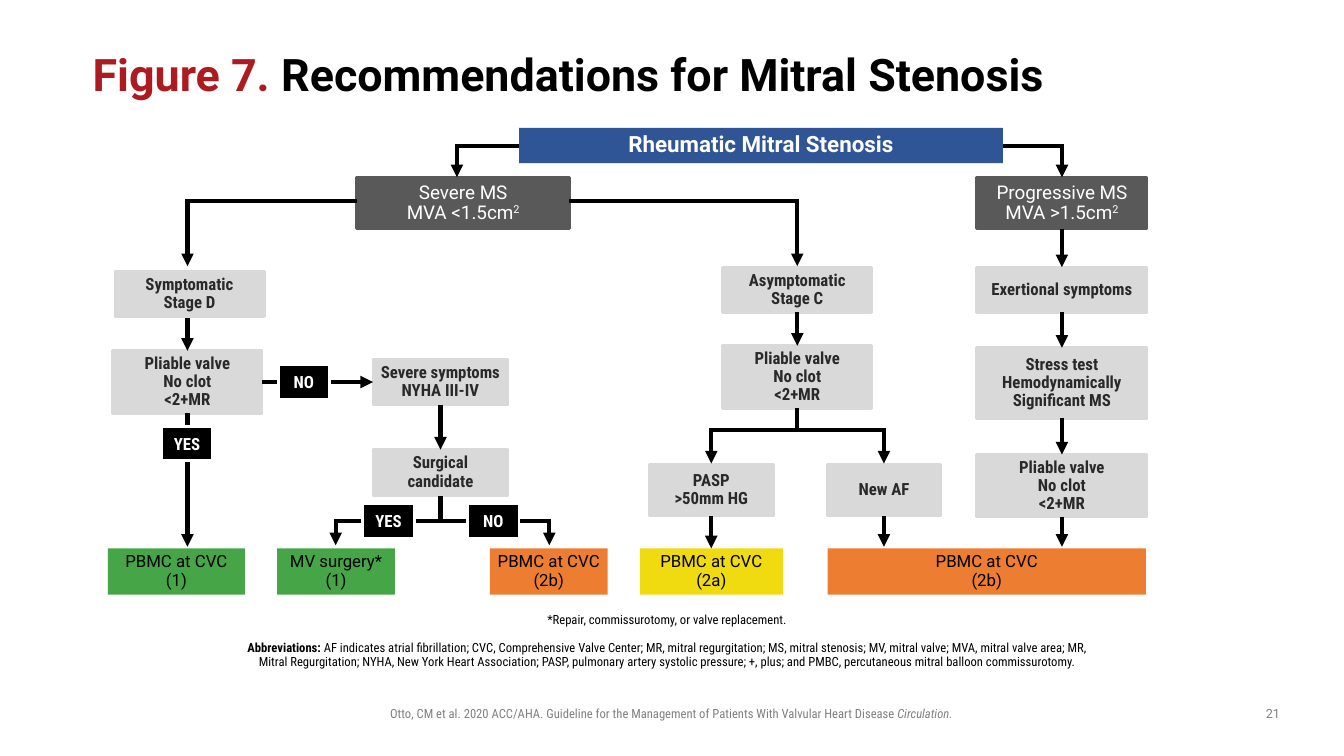
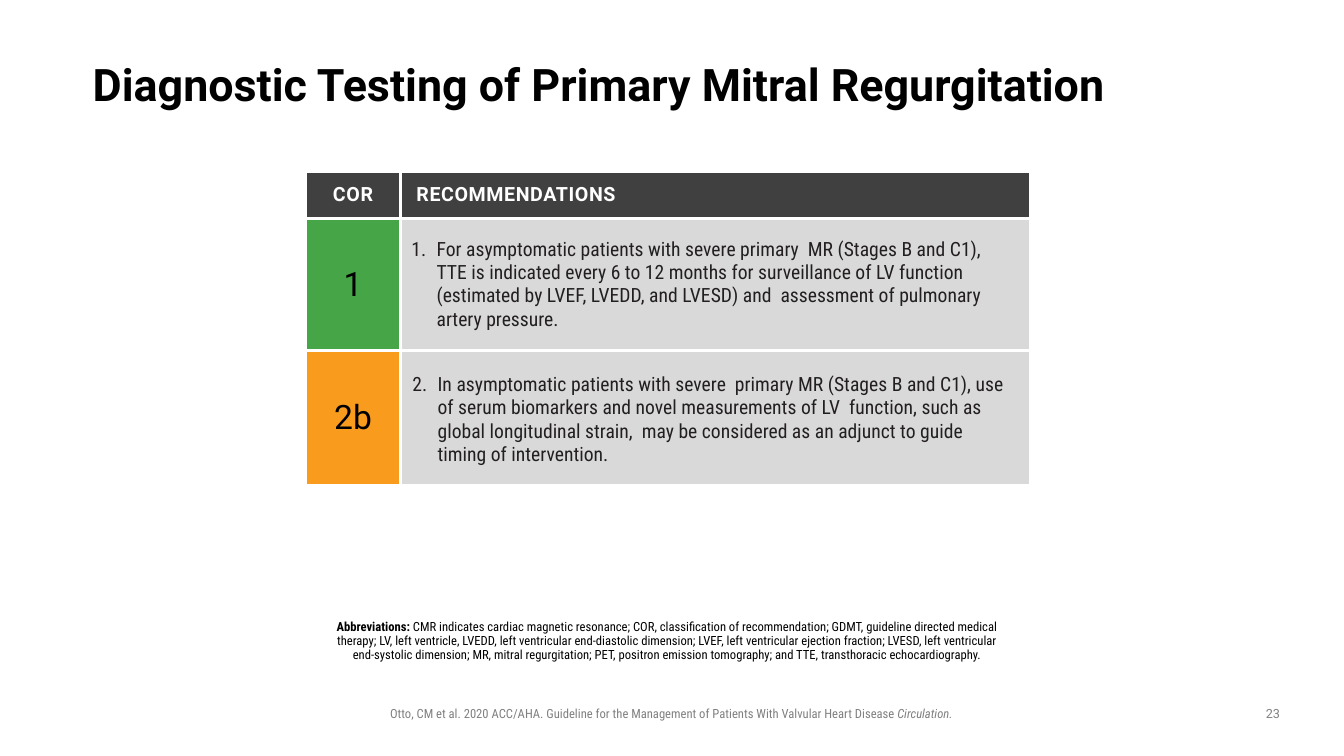
from lxml.etree import SubElement
from pptx import Presentation
from pptx.dml.color import RGBColor
from pptx.enum.shapes import MSO_CONNECTOR, MSO_SHAPE
from pptx.enum.text import MSO_ANCHOR, MSO_AUTO_SIZE, PP_ALIGN
from pptx.oxml import parse_xml
from pptx.oxml.ns import nsdecls, qn
from pptx.util import Pt

WIDE, SLIM = "Roboto", "Roboto Condensed"
BLACK, WHITE, RED, BLUE = "000000", "FFFFFF", "AC1B1F", "2F5597"
GREEN, ORANGE, YELLOW, AMBER = "46A547", "ED7D31", "F0DB10", "F99B1D"
DARK, SLATE, PALE, GREY = "404040", "595959", "D9D9D9", "808080"

HEAD = (WIDE, 32, BLACK, True)
MARK = (WIDE, 32, RED, True)
ROOT = (WIDE, 16, WHITE, True)
GRADE = (WIDE, 13.5, WHITE, False)
STEP = (SLIM, 12, "292929", True)
END = (WIDE, 12, BLACK, False)
TAG = (SLIM, 12, WHITE, True)
NOTE = (SLIM, 9, BLACK, False)
LABEL = (SLIM, 9, BLACK, True)
FOOT = (SLIM, 9, GREY, False)
PAGE = (WIDE, 9, GREY, False)
TOP = (WIDE, 14, WHITE, True)
CLASS = (WIDE, 24, BLACK, False)
ADVICE = (SLIM, 14, "231F20", False)

LEFT, MIDDLE = PP_ALIGN.LEFT, PP_ALIGN.CENTER
BOTTOM_SIDE, LEFT_SIDE, RIGHT_SIDE, TOP_SIDE = 2, 1, 3, 0


def tint(fill, code):
    fill.solid()
    fill.fore_color.rgb = RGBColor.from_string(code)


def say(para, text, style, **extra):
    run = para.add_run()
    run.text = text
    face, size, code, bold = style
    run.font.name, run.font.size, run.font.bold = face, Pt(size), bold
    tint(run.font.fill, code)
    for name, value in extra.items():
        run.font._element.set(name, str(value))


def fit(frame, sides=(0, 0, 0, 0), anchor=MSO_ANCHOR.MIDDLE):
    frame.word_wrap = True
    frame.auto_size = MSO_AUTO_SIZE.NONE
    frame.vertical_anchor = anchor
    left, top, right, bottom = map(Pt, sides)
    frame.margin_left, frame.margin_top = left, top
    frame.margin_right, frame.margin_bottom = right, bottom


def lay(frame, paras, align=MIDDLE, space=0.9, gap=0):
    for index, runs in enumerate(paras):
        para = frame.add_paragraph() if index else frame.paragraphs[0]
        para.alignment, para.line_spacing = align, space
        para.space_before = Pt(gap if index else 0)
        for text, style, *extra in runs:
            say(para, text, style, **(extra[0] if extra else {}))


def move(shape, box):
    shape.left, shape.top, shape.width, shape.height = map(Pt, box)


def head(slide, box, runs):
    title = slide.shapes.title
    move(title, box)
    fit(title.text_frame)
    lay(title.text_frame, [runs], LEFT)


def note(slide, box, paras):
    body = slide.placeholders[1]
    move(body, box)
    frame = body.text_frame
    fit(frame, (0, 3.6, 7.2, 3.6), MSO_ANCHOR.TOP)
    lay(frame, paras, gap=10)
    for para in frame.paragraphs:
        props = para._p.get_or_add_pPr()
        props.set("marL", "0")
        props.set("indent", "0")
        SubElement(props, qn("a:buNone"))


def label(slide, box, runs):
    text = slide.shapes.add_textbox(*map(Pt, box))
    fit(text.text_frame, (7.2, 3.6, 7.2, 3.6), MSO_ANCHOR.TOP)
    lay(text.text_frame, [runs], space=1)
    return text


def footer(slide):
    text = label(slide, (228.2, 500.4, 502.6, 18), [
        ("Otto, CM et al. 2020 ACC/AHA. Guideline for the Management of "
         "Patients With Valvular Heart Disease ", FOOT),
        ("Circulation.", FOOT, {"i": 1})])
    slide.slide_layout.shapes.element.append(text.element)


def page(slide, number):
    label(slide, (894.2, 500.4, 30.2, 18.7), [(number, PAGE)])


def stroke(shape, arrow):
    tint(shape.line.fill, BLACK)
    shape.line.width = Pt(3)
    props = shape.element.spPr
    line = props.find(qn("a:ln"))
    SubElement(line, qn("a:miter"), lim="800000")
    if arrow:
        SubElement(line, qn("a:tailEnd"), type="triangle")
    return props


def flow(slide, left, top):
    shapes = slide.shapes

    def at(x, y):
        return Pt(left + x), Pt(top + y)

    def node(box, lines, style, fill, edge=None, space=0.9):
        x, y, width, height = box
        shape = shapes.add_shape(MSO_SHAPE.RECTANGLE, *at(x, y),
                                 Pt(width), Pt(height))
        shape.shadow.inherit = False
        tint(shape.fill, fill)
        if edge:
            tint(shape.line.fill, edge)
            shape.line.width = Pt(2)
        else:
            shape.line.fill.background()
        fit(shape.text_frame)
        paras = [[(line, style)] if isinstance(line, str) else line
                 for line in lines]
        lay(shape.text_frame, paras, space=space)
        return shape

    def step(box, *lines):
        return node(box, lines, STEP, PALE, PALE)

    def grade(box, name, area):
        small = ("2", GRADE, {"baseline": 30000})
        return node(box, [name, [(area, GRADE), small]], GRADE, SLATE, SLATE)

    def wire(start, stop, arrow=True):
        ends = [at(*end) if isinstance(end[0], (int, float)) else (0, 0)
                for end in (start, stop)]
        line = shapes.add_connector(MSO_CONNECTOR.STRAIGHT, *ends[0], *ends[1])
        if ends[0] == (0, 0):
            line.begin_connect(*start)
        if ends[1] == (0, 0):
            line.end_connect(*stop)
        SubElement(stroke(line, arrow), qn("a:effectLst"))

    def bend(*points):
        first, *rest = [at(*point) for point in points]
        path = shapes.build_freeform(*first)
        path.add_line_segments(rest, close=False)
        shape = path.convert_to_shape()
        shape.shadow.inherit = False
        shape.fill.background()
        stroke(shape, True)

    def fork(box, x, y, tips, low):
        wire((box, BOTTOM_SIDE), (x, y), False)
        for tip in tips:
            bend((x, y), (tip, y), (tip, low))

    pliable = ("Pliable valve", "No clot", "<2+MR")
    node((298.8, 1.4, 345.6, 25.2), ["Rheumatic Mitral Stenosis"], ROOT, BLUE)
    grade((182.9, 36.7, 151.9, 36.7), "Severe MS", "MVA <1.5cm")
    slow = grade((625.7, 36.7, 121.7, 36.7), "Progressive MS", "MVA >1.5cm")
    step((10.1, 103.7, 106.6, 32.4), "Symptomatic", "Stage D")
    quiet = step((444.2, 100.8, 106.6, 32.4), "Asymptomatic", "Stage C")
    effort = step((625.7, 100.8, 121.7, 32.4), "Exertional symptoms")
    stress = step((625.7, 158.4, 121.7, 50.4), "Stress test",
                  "Hemodynamically", "Significant MS")
    valve_d = step((8.6, 160.6, 106.6, 44.6), *pliable)
    valve_c = step((444.2, 157, 106.6, 44.6), *pliable)
    valve_p = step((625.7, 234.7, 121.7, 44.6), *pliable)
    pasp = step((391.8, 241.9, 88.6, 36.7), "PASP", ">50mm HG")
    new_af = step((519.1, 241.9, 80.6, 36.7), "New AF")
    severe = step((194.4, 166.4, 96.5, 33), "Severe symptoms", "NYHA III-IV")
    surgeon = step((194.4, 231.1, 96.5, 33), "Surgical", "candidate")

    ends = [node((x, 301.7, width, 33.1), lines, END, fill)
            for x, width, fill, *lines in (
                (5, 98, GREEN, "PBMC at CVC", "(1)"),
                (126, 84.2, GREEN, "MV surgery*", "(1)"),
                (277.9, 84.2, ORANGE, "PBMC at CVC", "(2b)"),
                (385, 102.2, YELLOW, "PBMC at CVC", "(2a)"),
                (519.1, 227.5, ORANGE, "PBMC at CVC", "(2b)"))]

    bend((298.8, 14), (254.4, 14), (254.4, 36.7))
    bend((644.4, 14), (686.55, 14), (686.55, 36.7))
    bend((182.9, 53.3), (61.9, 53.3), (61.9, 100.1))
    bend((334.8, 53.3), (497.5, 53.3), (497.5, 100.1))
    for upper, lower in ((slow, effort), (effort, stress), (stress, valve_p),
                         (quiet, valve_c), (severe, surgeon), (pasp, ends[3])):
        wire((upper, BOTTOM_SIDE), (lower, TOP_SIDE))
    wire((61.9, 137.5), (valve_d, TOP_SIDE))
    wire((valve_d, RIGHT_SIDE), (severe, LEFT_SIDE))
    for upper, x in ((valve_d, 61.9), (new_af, 559.4), (valve_p, 686.55)):
        wire((upper, BOTTOM_SIDE), (x, 300.5))
    fork(valve_c, 497.5, 217.4, (436.1, 559.4), 241.2)
    fork(surgeon, 242.65, 282.2, (167.8, 320.4), 299.5)

    for x, y, word in ((43.2, 214.6, "YES"), (126.7, 170.6, "NO"),
                       (187.2, 270, "YES"), (262.1, 270, "NO")):
        node((x, y, 36.7, 24.5), [word], TAG, BLACK, WHITE, 1)


def cell(spot, fill, sides, align, runs, hang=None):
    spot.vertical_anchor = MSO_ANCHOR.MIDDLE
    left, top, right, bottom = map(Pt, sides)
    spot.margin_left, spot.margin_top = left, top
    spot.margin_right, spot.margin_bottom = right, bottom
    lay(spot.text_frame, [runs], align, 1)
    if hang:
        margin, indent, number = hang
        props = spot.text_frame.paragraphs[0]._p.get_or_add_pPr()
        props.set("marL", str(Pt(margin)))
        props.set("indent", str(Pt(indent)))
        if number:
            SubElement(props, qn("a:buAutoNum"), type="arabicPeriod",
                       startAt=str(number))
    tint(spot.fill, fill)
    for index, side in enumerate("LRTB"):
        spot._tc.get_or_add_tcPr().insert(index, parse_xml(
            f'<a:ln{side} {nsdecls("a")} w="{Pt(2.25)}"><a:solidFill>'
            f'<a:srgbClr val="{WHITE}"/></a:solidFill></a:ln{side}>'))


def advice(slide, box, rows):
    table = slide.shapes.add_table(len(rows) + 1, 2, *map(Pt, box)).table
    table.first_row = table.horz_banding = False
    for column, width in zip(table.columns, (67.7, 450)):
        column.width = Pt(width)
    for row, height in zip(table.rows, (33.8, 94.3, 96.5)):
        row.height = Pt(height)
    plain = (7.2, 3.6, 7.2, 3.6)
    cell(table.cell(0, 0), DARK, plain, MIDDLE, [("COR", TOP, {"spc": 50})])
    cell(table.cell(0, 1), DARK, plain, LEFT,
         [("RECOMMENDATIONS", TOP, {"spc": 40})], (4.3, 0, None))
    for index, (rank, fill, sides, margin, text) in enumerate(rows, 1):
        cell(table.cell(index, 0), fill, (3.6,) * 4, MIDDLE, [(rank, CLASS)])
        cell(table.cell(index, 1), PALE, sides, LEFT, [(text, ADVICE)],
             (margin, -18, index))


def main():
    deck = Presentation()
    deck.slide_width, deck.slide_height = Pt(960), Pt(540)
    layout = deck.slide_layouts[1]

    slide = deck.slides.add_slide(layout)
    head(slide, (66.2, 28.8, 828, 51.8), [
        ("Figure 7. ", MARK), ("Recommendations for Mitral Stenosis", HEAD)])
    note(slide, (165.6, 434.9, 628.6, 21.6), [
        [("*Repair, commissurotomy, or valve replacement.", NOTE)],
        [("Abbreviations: ", LABEL),
         ("AF indicates atrial fibrillation; CVC, Comprehensive Valve Center; "
          "MR, mitral regurgitation; MS, mitral stenosis; MV, mitral valve; "
          "MVA, mitral valve area; MR, Mitral Regurgitation; NYHA, New York "
          "Heart Association; PASP, pulmonary artery systolic pressure; "
          "+, plus; and PMBC, percutaneous mitral balloon commissurotomy.",
          NOTE)]])
    flow(slide, 72, 90)
    page(slide, "21")
    footer(slide)

    slide = deck.slides.add_slide(layout)
    head(slide, (66.2, 36, 820, 51.8), [
        ("Diagnostic Testing of Primary Mitral Regurgitation", HEAD)])
    advice(slide, (218.3, 122.4, 517.7, 224.6), [
        ("1", GREEN, (3.6, 3.6, 14.4, 3.6), 22.3,
         "For asymptomatic patients with severe primary  MR (Stages B and "
         "C1), TTE is indicated every 6 to 12 months for surveillance of LV "
         "function (estimated by LVEF, LVEDD, and LVESD) and  assessment of "
         "pulmonary artery pressure."),
        ("2b", AMBER, (0, 2.2, 14.4, 0), 26.6,
         "In asymptomatic patients with severe  primary MR (Stages B and "
         "C1), use of serum biomarkers and novel measurements of LV  "
         "function, such as global longitudinal strain,  may be considered "
         "as an adjunct to guide timing of intervention.")])
    note(slide, (235.4, 439.9, 488.9, 21.6), [
        [("Abbreviations: ", LABEL),
         ("CMR indicates cardiac magnetic resonance; COR, classification of "
          "recommendation; GDMT, guideline directed medical therapy; LV, left "
          "ventricle, LVEDD, left ventricular end-diastolic dimension; LVEF, "
          "left ventricular ejection fraction; LVESD, left ventricular "
          "end-systolic dimension; MR, mitral regurgitation; PET, positron "
          "emission tomography; and TTE, transthoracic echocardiography.",
          NOTE)]])
    page(slide, "23")
    deck.save("out.pptx")


if __name__ == "__main__":
    main()
